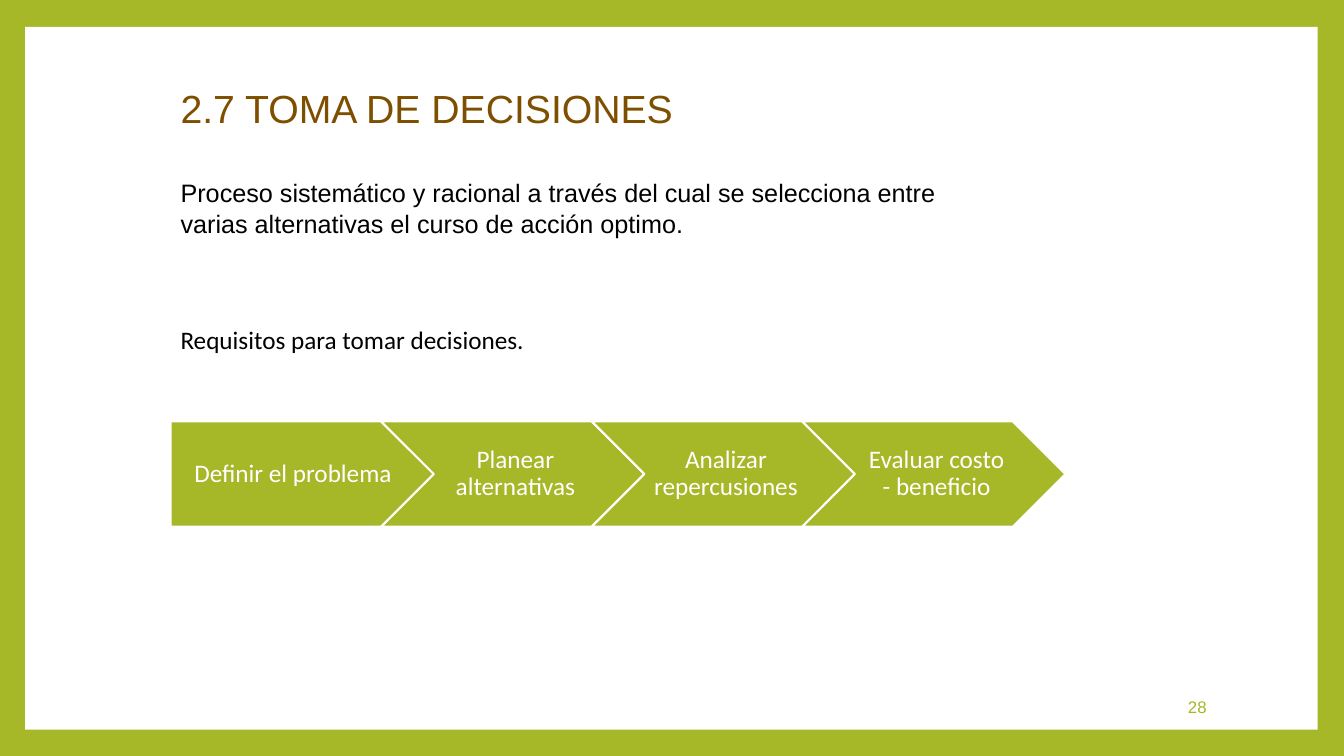
from pptx import Presentation
from pptx.dml.color import RGBColor
from pptx.enum.shapes import MSO_SHAPE
from pptx.enum.text import MSO_ANCHOR, PP_ALIGN
from pptx.util import Pt

RECTANGLE, PENTAGON, CHEVRON = MSO_SHAPE.RECTANGLE, MSO_SHAPE.PENTAGON, MSO_SHAPE.CHEVRON
LEFT, CENTER, RIGHT = PP_ALIGN.LEFT, PP_ALIGN.CENTER, PP_ALIGN.RIGHT
TOP, MIDDLE = MSO_ANCHOR.TOP, MSO_ANCHOR.MIDDLE

COLORS = {"green": "A6B727", "white": "FFFFFF", "brown": "7F4F00", "black": "000000"}
MARGIN = 121.9
STEPS = [
    "Definir el problema",
    "Planear alternativas",
    "Analizar repercusiones",
    "Evaluar costo - beneficio",
]
STEP_TOP, STEP_WIDTH, STEP_HEIGHT, STEP_PITCH = 301, 188, 75.2, 150.4


def color(name):
    """Return the named palette colour."""
    return RGBColor.from_string(COLORS[name])


def write(shape, text, size, font, ink, alignment=LEFT, anchor=TOP):
    """Put one formatted paragraph in a shape."""
    frame = shape.text_frame
    frame.word_wrap = True
    frame.vertical_anchor = anchor
    paragraph = frame.paragraphs[0]
    paragraph.text = text
    paragraph.alignment = alignment
    for name, value in {"size": Pt(size), "name": font}.items():
        setattr(paragraph.runs[0].font, name, value)
    paragraph.runs[0].font.color.rgb = color(ink)
    return paragraph


def add_text(slide, box, *content):
    """Add a text box at the given left, top, width and height."""
    write(slide.shapes.add_textbox(*map(Pt, box)), *content)


def add_block(slide, kind, box, fill):
    """Add a filled preset shape without outline or shadow."""
    shape = slide.shapes.add_shape(kind, *map(Pt, box))
    shape.shadow.inherit = False
    shape.fill.solid()
    shape.fill.fore_color.rgb = color(fill)
    shape.line.fill.background()
    return shape


def add_step(slide, index, text):
    """Add one arrow of the decision process."""
    kind = CHEVRON if index else PENTAGON
    box = (MARGIN + index * STEP_PITCH, STEP_TOP, STEP_WIDTH, STEP_HEIGHT)
    shape = add_block(slide, kind, box, "green")
    shape.line.color.rgb = color("white")
    shape.line.width = Pt(1.5)
    paragraph = write(shape, text, 18, "Calibri", "white", CENTER, MIDDLE)
    paragraph.line_spacing = 0.9
    margins = {"left": 5.7 if index else 7.6, "top": 3.8, "right": 1.9, "bottom": 3.8}
    for side, value in margins.items():
        setattr(shape.text_frame, f"margin_{side}", Pt(value))


def main():
    """Build and save the decision-making slide."""
    presentation = Presentation()
    presentation.slide_width, presentation.slide_height = Pt(960), Pt(540)
    slide = presentation.slides.add_slide(presentation.slide_layouts[6])
    slide.background.fill.solid()
    slide.background.fill.fore_color.rgb = color("green")

    add_block(slide, RECTANGLE, (18, 19.2, 923.2, 502), "white")
    add_text(slide, (MARGIN, 56.7, 627, 41), "2.7 TOMA DE DECISIONES", 28, "Arial", "brown")
    definition = (
        "Proceso sistemático y racional a través del cual se selecciona "
        "entre varias alternativas el curso de acción optimo."
    )
    add_text(slide, (MARGIN, 123.3, 569.5, 51), definition, 18, "Arial", "black")
    requirements = "Requisitos para tomar decisiones."
    add_text(slide, (MARGIN, 227.8, 440, 29), requirements, 18, "Calibri", "black")
    for index, text in enumerate(STEPS):
        add_step(slide, index, text)
    add_text(slide, (734.4, 490.3, 134.6, 28.8), "28", 12, "Arial", "green", RIGHT, MIDDLE)

    presentation.save("out.pptx")


if __name__ == "__main__":
    main()
